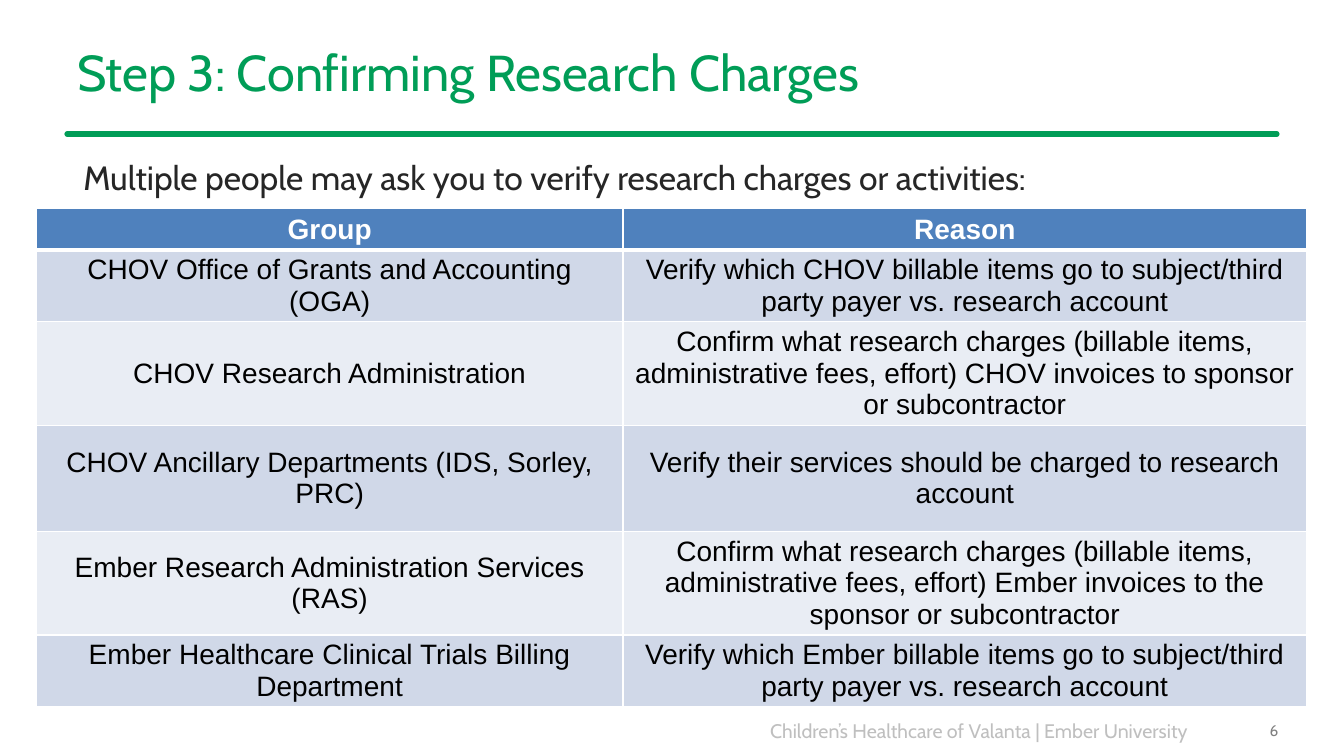
"""Build a slide with a table of the groups that ask to verify research charges."""
from pptx import Presentation
from pptx.dml.color import RGBColor
from pptx.enum.shapes import MSO_CONNECTOR
from pptx.enum.text import MSO_ANCHOR, PP_ALIGN
from pptx.oxml.ns import qn
from pptx.util import Inches, Pt
from lxml import etree

LEFT, CENTER, RIGHT = PP_ALIGN.LEFT, PP_ALIGN.CENTER, PP_ALIGN.RIGHT
TOP, MIDDLE = MSO_ANCHOR.TOP, MSO_ANCHOR.MIDDLE
STRAIGHT = MSO_CONNECTOR.STRAIGHT
GREEN, WHITE = "009D57", "FFFFFF"
HEADER, BANDS = "4F81BD", ("E9EDF4", "D0D8E8")


def rgb(value):
    return RGBColor.from_string(value)


def add_text(text, box, size, color, align=LEFT, anchor=TOP):
    tf = s.shapes.add_textbox(*map(Inches, box)).text_frame
    tf.word_wrap = True
    tf.vertical_anchor = anchor
    p = tf.paragraphs[0]
    p.text = text
    p.alignment = align
    p.font.name = "Cabin"
    p.font.size = Pt(size)
    p.font.color.rgb = rgb(color)
    return tf


prs = Presentation()
prs.slide_width, prs.slide_height = Inches(13.33), Inches(7.5)
s = prs.slides.add_slide(prs.slide_layouts[6])
W = prs.slide_width.inches
margin = W * 0.05
content = W - 2 * margin

rule = s.shapes.add_connector(STRAIGHT, Inches(margin), Inches(1.33),
                              Inches(W - margin), Inches(1.33))
rule.line.color.rgb = rgb(GREEN)
rule.line.width = Pt(4)
spPr = rule._element.spPr
spPr.find(qn("a:ln")).set("cap", "rnd")
etree.SubElement(spPr, qn("a:effectLst"))

add_text("Children’s Healthcare of Valanta | Ember University",
         (2.44, 7.08, 9.44, 0.34), 14, "BFBFBF", RIGHT)
add_text("Step 3: Confirming Research Charges",
         (margin, 0.17, content, 1.08), 36, GREEN, anchor=MIDDLE)
intro = add_text("Multiple people may ask you to verify research charges or activities:",
                 (margin, 1.51, 12.12, 5.44), 24, "262626")
intro.margin_left = Inches(0.16)
add_text("6", (12.11, 7, margin, 0.5), 11, "808080", RIGHT, MIDDLE)

rows = [
    ("Group", "Reason"),
    ("CHOV Office of Grants and Accounting (OGA)",
     "Verify which CHOV billable items go to subject/third party payer vs. research account"),
    ("CHOV Research Administration",
     "Confirm what research charges (billable items, administrative fees, effort) "
     "CHOV invoices to sponsor or subcontractor"),
    ("CHOV Ancillary Departments (IDS, Sorley, PRC)",
     "Verify their services should be charged to research account"),
    ("Ember Research Administration Services (RAS)",
     "Confirm what research charges (billable items, administrative fees, effort) "
     "Ember invoices to the sponsor or subcontractor"),
    ("Ember Healthcare Clinical Trials Billing Department",
     "Verify which Ember billable items go to subject/third party payer vs. research account"),
]
widths = (5.82, 6.78)
heights = (0.41, 0.71, 1.03, 1.05, 1.03, 0.71)
table = s.shapes.add_table(len(rows), len(widths), Inches(0.36), Inches(2.07),
                           Inches(sum(widths)), Inches(sum(heights))).table
for column, width in zip(table.columns, widths):
    column.width = Inches(width)
for i, (texts, height) in enumerate(zip(rows, heights)):
    table.rows[i].height = Inches(height)
    for j, text in enumerate(texts):
        cell = table.cell(i, j)
        cell.fill.solid()
        cell.fill.fore_color.rgb = rgb(BANDS[i % 2] if i else HEADER)
        cell.vertical_anchor = MIDDLE
        cell.margin_top = cell.margin_bottom = Inches(0.01)
        p = cell.text_frame.paragraphs[0]
        p.text = text
        p.alignment = CENTER
        p.font.name = "Arial"
        p.font.size = Pt(20)
        p.font.bold = i == 0
        p.font.color.rgb = rgb("000000" if i else WHITE)
        edge = etree.Element(qn("a:lnB"), w=str(Pt(1 if i else 3)))
        fill = etree.SubElement(edge, qn("a:solidFill"))
        etree.SubElement(fill, qn("a:srgbClr"), val=WHITE)
        cell._tc.tcPr.insert(0, edge)

prs.save("out.pptx")
